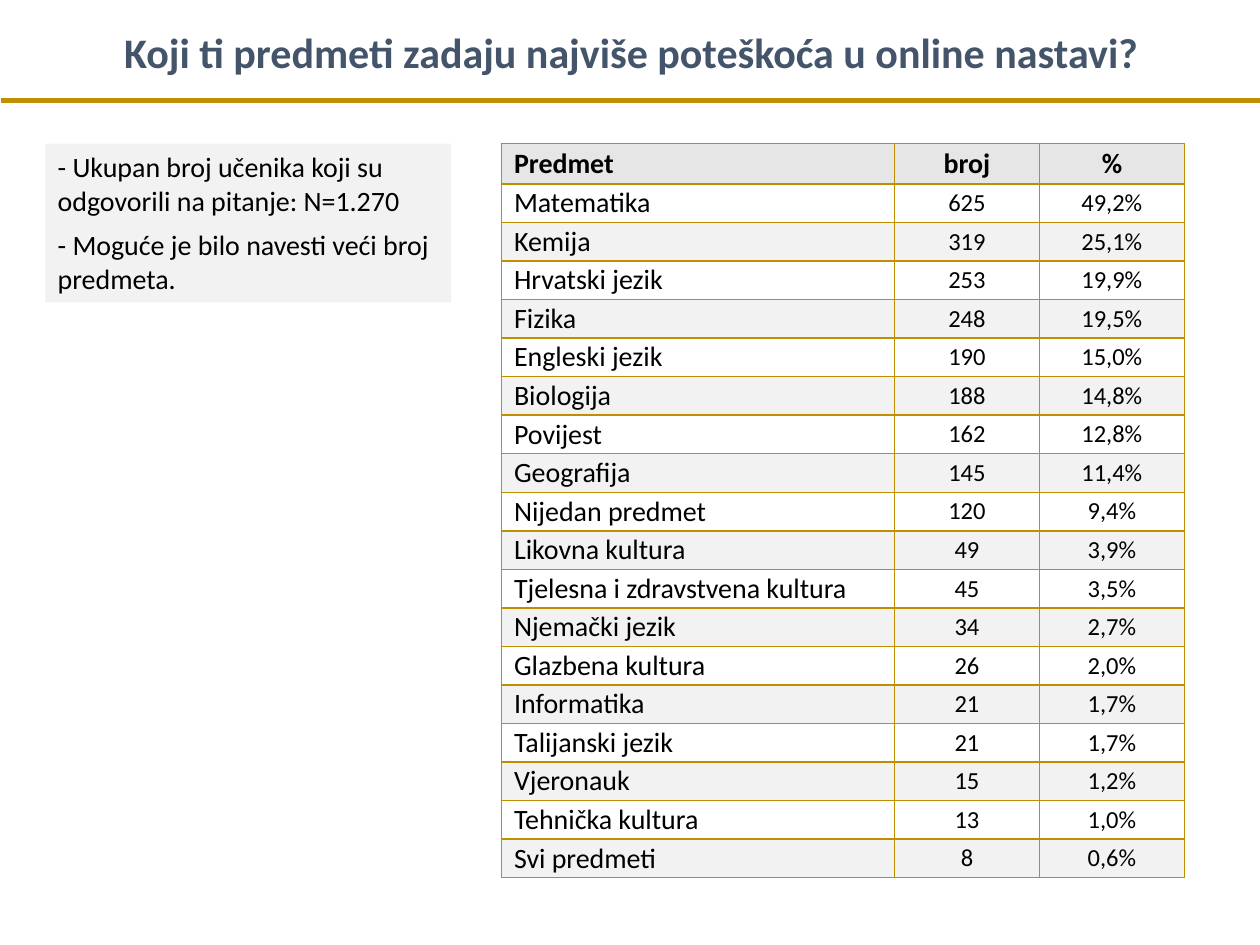
from lxml import etree
from pptx import Presentation
from pptx.dml.color import RGBColor
from pptx.enum.shapes import MSO_CONNECTOR, MSO_SHAPE
from pptx.enum.text import MSO_ANCHOR, PP_ALIGN
from pptx.oxml.ns import qn
from pptx.util import Inches, Pt

LEFT, CENTER = PP_ALIGN.LEFT, PP_ALIGN.CENTER
TOP, MIDDLE = MSO_ANCHOR.TOP, MSO_ANCHOR.MIDDLE
STRAIGHT, RECTANGLE = MSO_CONNECTOR.STRAIGHT, MSO_SHAPE.RECTANGLE

QUESTION = "Koji ti predmeti zadaju najviše poteškoća u online nastavi?"
NOTES = [
    "- Ukupan broj učenika koji su odgovorili na pitanje: N=1.270",
    "- Moguće je bilo navesti veći broj predmeta.",
]
HEADER = ("Predmet", "broj", "%")
SUBJECTS = [
    ("Matematika", "625", "49,2%"),
    ("Kemija", "319", "25,1%"),
    ("Hrvatski jezik", "253", "19,9%"),
    ("Fizika", "248", "19,5%"),
    ("Engleski jezik", "190", "15,0%"),
    ("Biologija", "188", "14,8%"),
    ("Povijest", "162", "12,8%"),
    ("Geografija", "145", "11,4%"),
    ("Nijedan predmet", "120", "9,4%"),
    ("Likovna kultura", "49", "3,9%"),
    ("Tjelesna i zdravstvena kultura", "45", "3,5%"),
    ("Njemački jezik", "34", "2,7%"),
    ("Glazbena kultura", "26", "2,0%"),
    ("Informatika", "21", "1,7%"),
    ("Talijanski jezik", "21", "1,7%"),
    ("Vjeronauk", "15", "1,2%"),
    ("Tehnička kultura", "13", "1,0%"),
    ("Svi predmeti", "8", "0,6%"),
]

THEME = {
    "font": "Calibri",
    "title": "44546A",
    "text": "000000",
    "rule": "BF9000",
    "border": "BF8F00",
    "header": "E7E6E6",
    "band": "F2F2F2",
    "title_size": 24,
    "text_size": 16,
    "number_size": 14,
}
COLUMN_WIDTHS = (3.12, 1.15, 1.15)
TABLE_HEIGHT, HEADER_HEIGHT = 5.83, 0.32
CONTENT_TOP = 1.14


def color(role):
    return RGBColor.from_string(THEME[role])


def write(paragraph, text, size="text_size", role="text", bold=False, align=LEFT):
    paragraph.alignment = align
    run = paragraph.add_run()
    run.text = text
    run.font.name = THEME["font"]
    run.font.size = Pt(THEME[size])
    run.font.bold = bold
    run.font.color.rgb = color(role)


def fill_with(target, role):
    target.fill.solid()
    target.fill.fore_color.rgb = color(role)


def add_borders(cell):
    properties = cell._tc.get_or_add_tcPr()
    for side in ("a:lnL", "a:lnR", "a:lnT", "a:lnB"):
        border = etree.SubElement(properties, qn(side), w=str(Pt(1)))
        paint = etree.SubElement(border, qn("a:solidFill"))
        etree.SubElement(paint, qn("a:srgbClr"), val=THEME["border"])


def add_heading(slide):
    heading = slide.shapes.title
    heading.left, heading.top = Inches(0.01), Inches(0.16)
    heading.width, heading.height = Inches(10), Inches(0.5)
    frame = heading.text_frame
    frame.word_wrap = True
    frame.vertical_anchor = TOP
    write(frame.paragraphs[0], QUESTION, "title_size", "title", True, CENTER)

    rule = slide.shapes.add_connector(
        STRAIGHT, Inches(0.01), Inches(0.8), Inches(10.01), Inches(0.8))
    rule.line.color.rgb = color("rule")
    rule.line.width = Pt(3)
    etree.SubElement(rule._element.spPr, qn("a:effectLst"))


def add_notes_panel(slide):
    panel = slide.shapes.add_shape(
        RECTANGLE, Inches(0.36), Inches(CONTENT_TOP), Inches(3.22), Inches(1.26))
    panel.shadow.inherit = False
    fill_with(panel, "band")
    panel.line.fill.background()
    frame = panel.text_frame
    frame.word_wrap = True
    frame.vertical_anchor = TOP
    for index, note in enumerate(NOTES):
        paragraph = frame.add_paragraph() if index else frame.paragraphs[0]
        paragraph.space_after = Pt(6)
        write(paragraph, note)


def add_subject_table(slide):
    rows = [HEADER] + SUBJECTS
    table = slide.shapes.add_table(
        len(rows), len(HEADER), Inches(3.98), Inches(CONTENT_TOP),
        Inches(sum(COLUMN_WIDTHS)), Inches(TABLE_HEIGHT)).table
    for column, width in zip(table.columns, COLUMN_WIDTHS):
        column.width = Inches(width)
    subject_height = (TABLE_HEIGHT - HEADER_HEIGHT) / len(SUBJECTS)
    for r, values in enumerate(rows):
        is_header = r == 0
        table.rows[r].height = Inches(HEADER_HEIGHT if is_header else subject_height)
        for c, value in enumerate(values):
            cell = table.cell(r, c)
            cell.vertical_anchor = MIDDLE
            cell.margin_left = cell.margin_right = Inches(0.1)
            cell.margin_top = cell.margin_bottom = Pt(1.2)
            add_borders(cell)
            if is_header or r % 2 == 0:
                fill_with(cell, "header" if is_header else "band")
            else:
                cell.fill.background()
            size = "text_size" if is_header or c == 0 else "number_size"
            write(cell.text_frame.paragraphs[0], value, size,
                  bold=is_header, align=CENTER if c else LEFT)


def main():
    deck = Presentation()
    deck.slide_width, deck.slide_height = Inches(10), Inches(7.5)
    slide = deck.slides.add_slide(deck.slide_layouts[5])
    add_heading(slide)
    add_notes_panel(slide)
    add_subject_table(slide)
    deck.save("out.pptx")


if __name__ == "__main__":
    main()
